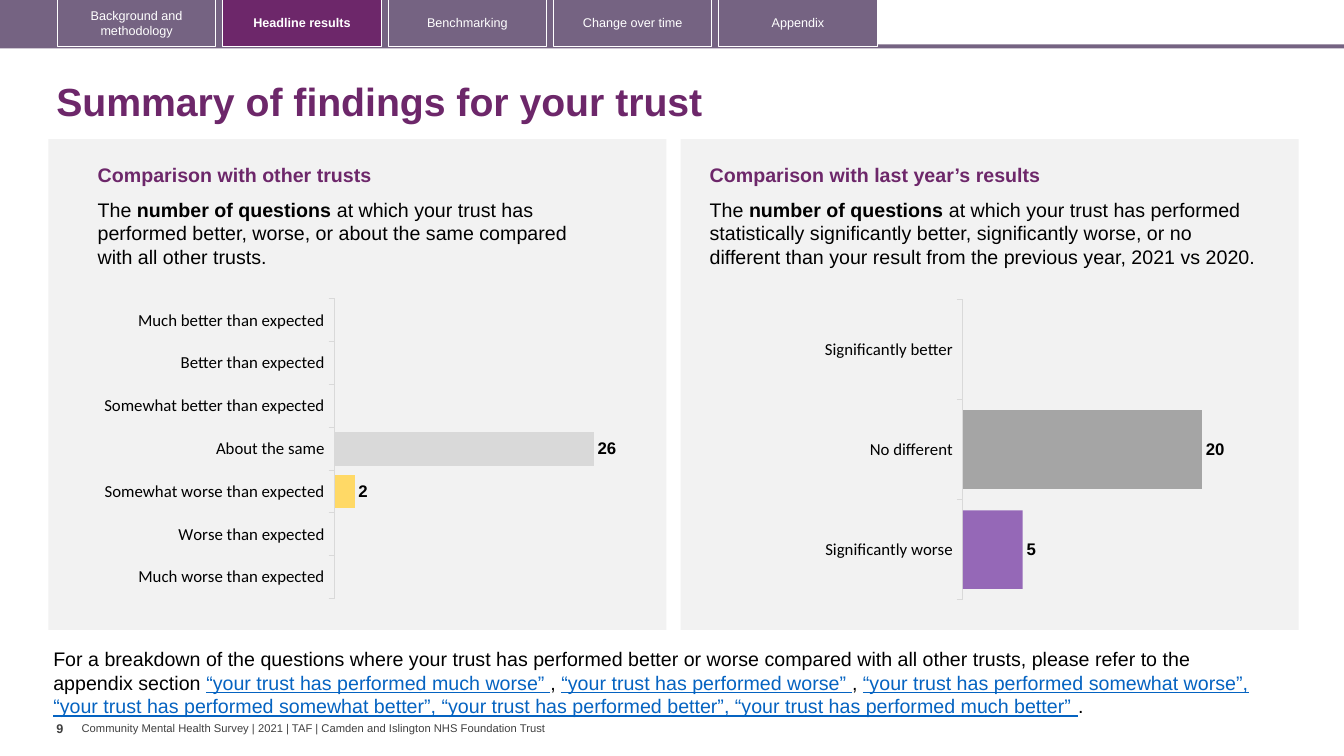
from dataclasses import dataclass

from lxml import etree
from pptx import Presentation
from pptx import util as u
from pptx.chart.data import CategoryChartData
from pptx.dml.color import RGBColor
from pptx.enum import chart as ch, shapes, text
from pptx.oxml import parse_xml
from pptx.oxml.ns import nsdecls, qn

PLUM, MAUVE, WHITE, BLACK = "6D276A", "756382", "FFFFFF", "000000"
PALE, RULE, LINK, DARK = "F2F2F2", "D9D9D9", "0563C1", "404040"


@dataclass
class Run:
    text: str
    color: str = BLACK
    bold: bool = False
    underline: bool = False


@dataclass
class Box:
    left: float
    top: float
    width: float
    height: float


@dataclass
class Bar:
    label: str
    value: int | None
    color: str
    opacity: int = 100


@dataclass
class Panel:
    left: float
    text_left: float
    text_width: float
    heading: str
    finding: str
    chart: Box
    axis_max: int
    bars: list[Bar]


def rgb(color: str) -> RGBColor:
    return RGBColor.from_string(color)


def add_runs(frame, runs: list[Run], size: float) -> None:
    for part in runs:
        run = frame.paragraphs[0].add_run()
        run.text = part.text
        run.font.name = "Arial"
        run.font.size = u.Pt(size)
        run.font.bold = part.bold
        run.font.underline = part.underline
        run.font.color.rgb = rgb(part.color)


def add_rect(slide, box: Box, fill: str | None, line: str | None = None):
    rect = slide.shapes.add_shape(
        shapes.MSO_SHAPE.RECTANGLE, u.Inches(box.left), u.Inches(box.top),
        u.Inches(box.width), u.Inches(box.height))
    rect.shadow.inherit = False
    if fill:
        rect.fill.solid()
        rect.fill.fore_color.rgb = rgb(fill)
    else:
        rect.fill.background()
    if line:
        rect.line.color.rgb = rgb(line)
        rect.line.width = u.Pt(0.75)
    else:
        rect.line.fill.background()
    return rect


def add_text(slide, box: Box, runs: list[Run], size: float, wrap: bool = True,
             margins: tuple[float, float] = (0.1, 0.05), middle: bool = False):
    frame = slide.shapes.add_textbox(
        u.Inches(box.left), u.Inches(box.top),
        u.Inches(box.width), u.Inches(box.height)).text_frame
    frame.word_wrap = wrap
    frame.margin_left = frame.margin_right = u.Inches(margins[0])
    frame.margin_top = frame.margin_bottom = u.Inches(margins[1])
    if middle:
        frame.vertical_anchor = text.MSO_ANCHOR.MIDDLE
    add_runs(frame, runs, size)
    return frame


def add_bars(slide, box: Box, bars: list[Bar], axis_max: int) -> None:
    counts = CategoryChartData(number_format="0")
    counts.categories = [bar.label for bar in bars]
    counts.add_series("Series 1", [bar.value for bar in bars])
    chart = slide.shapes.add_chart(
        ch.XL_CHART_TYPE.BAR_CLUSTERED, u.Inches(box.left), u.Inches(box.top),
        u.Inches(box.width), u.Inches(box.height), counts).chart
    chart.has_title = chart.has_legend = False
    chart.font.name, chart.font.size = "Calibri", u.Pt(10)
    chart.font.color.rgb = rgb(BLACK)

    answers = chart.category_axis
    answers.reverse_order = True
    answers.has_major_gridlines = False
    answers.major_tick_mark = ch.XL_TICK_MARK.OUTSIDE
    answers.format.line.color.rgb = rgb(RULE)
    answers.format.line.width = u.Pt(0.75)
    answers.tick_labels.font.name = "Calibri"
    answers.tick_labels.font.size = u.Pt(12)
    answers.tick_labels.font.color.rgb = rgb(BLACK)

    scale = chart.value_axis
    scale.visible = scale.has_major_gridlines = False
    scale.minimum_scale, scale.maximum_scale = 0, axis_max

    plot = chart.plots[0]
    plot.gap_width = 27
    plot.vary_by_categories = False
    plot.has_data_labels = True
    labels = plot.data_labels
    labels.show_value = True
    labels.position = ch.XL_LABEL_POSITION.OUTSIDE_END
    labels.font.name, labels.font.size = "Arial", u.Pt(12)
    labels.font.bold = True
    labels.font.color.rgb = rgb(BLACK)

    for index, bar in enumerate(bars):
        fill = plot.series[0].points[index].format.fill
        fill.solid()
        fill.fore_color.rgb = rgb(bar.color)
        if bar.opacity < 100:
            for color in plot.series[0].points[index]._element.iter(qn("a:srgbClr")):
                if color.get("val") == bar.color:
                    etree.SubElement(color, qn("a:alpha"), val=str(bar.opacity * 1000))

    # Fixed inner plot area, so both charts share one layout
    area = chart._chartSpace.chart.plotArea
    for layout in area.findall(qn("c:layout")):
        area.remove(layout)
    sizes = "".join(f'<c:{key} val="{val}"/>' for key, val in
                    (("x", 0.467), ("y", 0.072), ("w", 0.476), ("h", 0.872)))
    area.insert(0, parse_xml(
        f'<c:layout {nsdecls("c")}><c:manualLayout><c:layoutTarget val="inner"/>'
        f'<c:xMode val="edge"/><c:yMode val="edge"/>{sizes}</c:manualLayout></c:layout>'))


def add_panel(slide, panel: Panel) -> None:
    add_rect(slide, Box(panel.left, 1.38, 6.13, 4.87), PALE)
    add_text(slide, Box(panel.text_left, 1.57, 5.52, 0.34),
             [Run(panel.heading, PLUM, True)], 14)
    add_text(slide, Box(panel.text_left, 1.91, panel.text_width, 0.81),
             [Run("The "), Run("number of questions ", bold=True), Run(panel.finding)], 14)
    add_bars(slide, panel.chart, panel.bars, panel.axis_max)


TABS = ["Background and methodology", "Headline results", "Benchmarking",
        "Change over time", "Appendix"]
PANELS = [
    Panel(0.48, 0.87, 5, "Comparison with other trusts",
          "at which your trust has performed better, worse, or about the same "
          "compared with all other trusts.", Box(0.41, 2.72, 6.23, 3.41), 30,
          [Bar("Much better than expected", None, "419999"),
           Bar("Better than expected", None, "5FBD83"),
           Bar("Somewhat better than expected", None, "A9D18E"),
           Bar("About the same", 26, "D9D9D9"),
           Bar("Somewhat worse than expected", 2, "FFD966"),
           Bar("Worse than expected", None, "F1BE48"),
           Bar("Much worse than expected", None, "E87722")]),
    Panel(6.75, 6.94, 5.65, "Comparison with last year’s results",
          "at which your trust has performed statistically significantly better, "
          "significantly worse, or no different than your result from the previous "
          "year, 2021 vs 2020.", Box(6.64, 2.73, 6.23, 3.41), 25,
          [Bar("Significantly better", None, "9DC3E6"),
           Bar("No different", 20, "A5A5A5"),
           Bar("Significantly worse", 5, "7030A0", 71)]),
]
BREAKDOWN = [
    Run("For a breakdown of the questions where your trust has performed better or worse "
        "compared with all other trusts, please refer to the appendix section "),
    Run("“your trust has performed much worse” ", LINK, underline=True), Run(", "),
    Run("“your trust has performed worse” ", LINK, underline=True), Run(", "),
    Run("“your trust has performed somewhat worse”, “your trust has performed somewhat "
        "better”, “your trust has performed better”, “your trust has performed much "
        "better” ", LINK, underline=True), Run("."),
]


def main() -> None:
    deck = Presentation()
    deck.slide_width, deck.slide_height = u.Inches(13.33), u.Inches(7.5)
    slide = deck.slides.add_slide(deck.slide_layouts[6])

    # Navigation band and tabs
    add_rect(slide, Box(-0.03, 0.44, 13.36, 0.04), MAUVE)
    add_rect(slide, Box(-0.03, 0, 8.73, 0.47), MAUVE)
    for index, name in enumerate(TABS):
        current = name == "Headline results"
        tab = add_rect(slide, Box(0.57 + 1.64 * index, -0.01, 1.57, 0.47),
                       PLUM if current else None, WHITE).text_frame
        tab.word_wrap = True
        tab.vertical_anchor = text.MSO_ANCHOR.MIDDLE
        tab.paragraphs[0].alignment = text.PP_ALIGN.CENTER
        add_runs(tab, [Run(name, WHITE, current)], 9)

    # Title
    title = add_text(slide, Box(0.46, 0.67, 12.49, 0.72),
                     [Run("Summary of findings for your trust", PLUM, True)], 28, middle=True)
    title.paragraphs[0].line_spacing = 0.9

    # Result panels
    for panel in PANELS:
        add_panel(slide, panel)

    # Breakdown note and footer
    add_text(slide, Box(0.43, 6.37, 12.21, 0.81), BREAKDOWN, 14)
    add_text(slide, Box(0.56, 7.1, 0.25, 0.4), [Run("9", DARK, True)], 9, False, (0, 0.05))
    add_text(slide, Box(0.81, 7.16, 4.67, 0.13),
             [Run("Community Mental Health Survey | 2021 | TAF | "
                  "Camden and Islington NHS Foundation Trust", DARK)], 8, False, (0, 0), True)
    deck.save("out.pptx")


if __name__ == "__main__":
    main()
